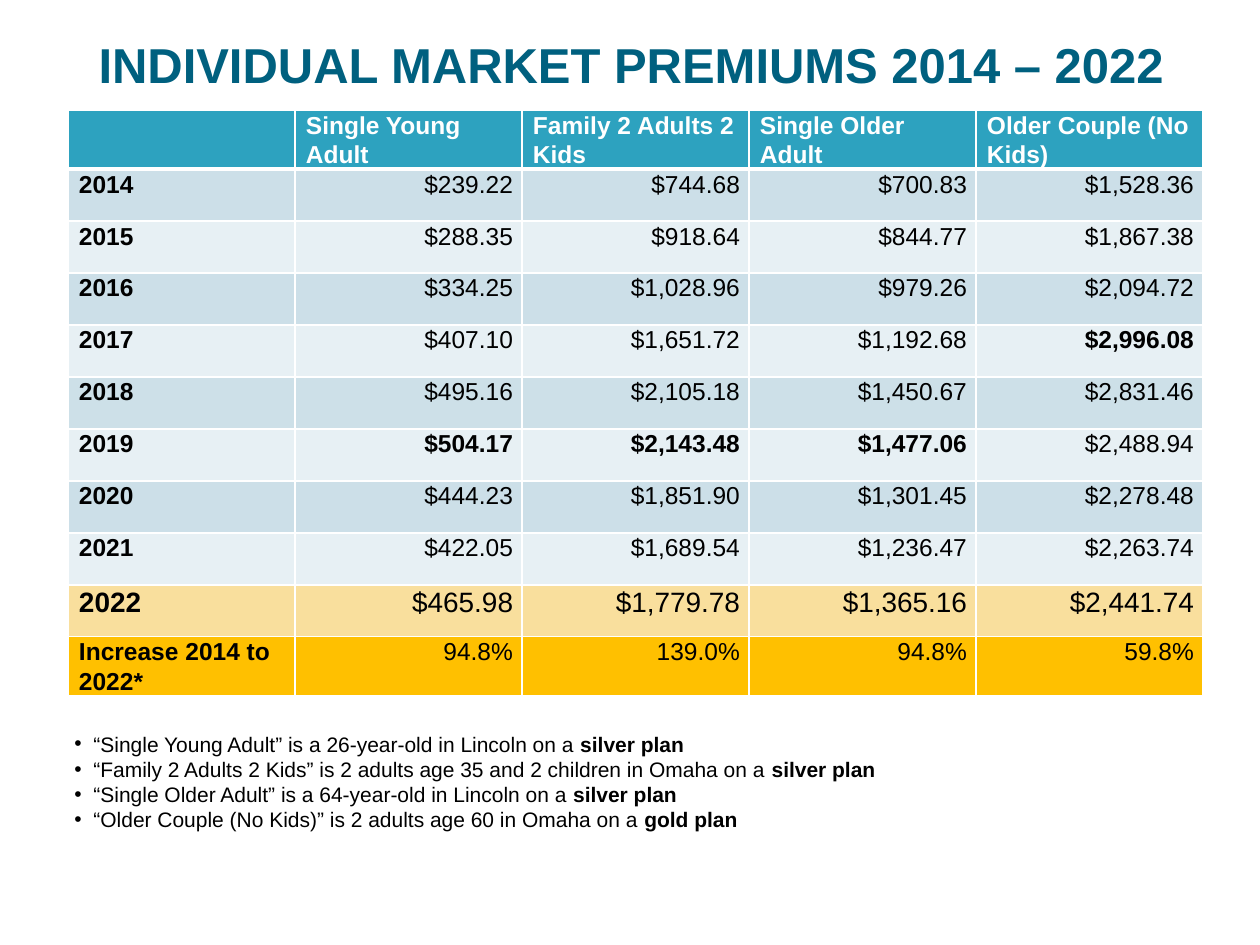
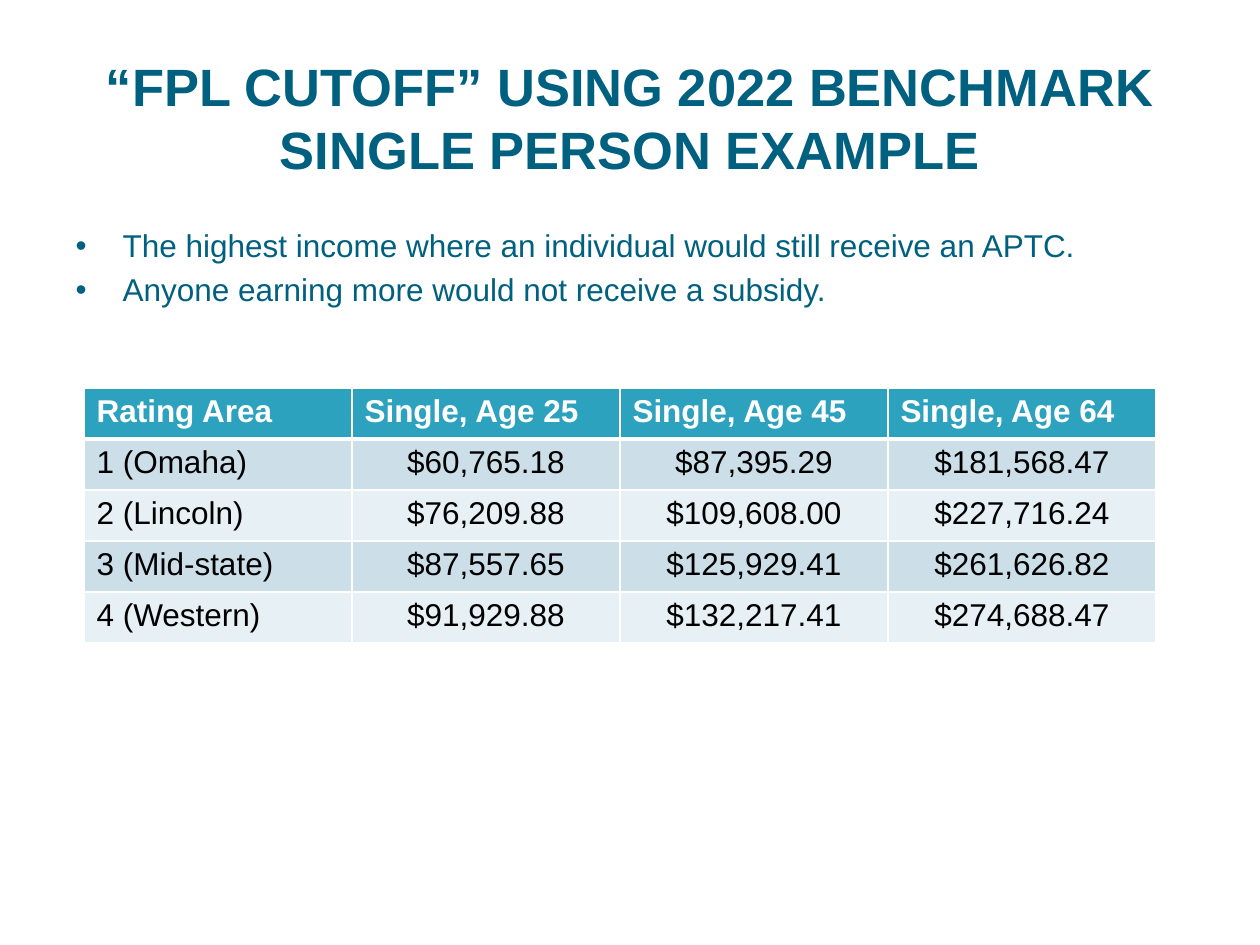
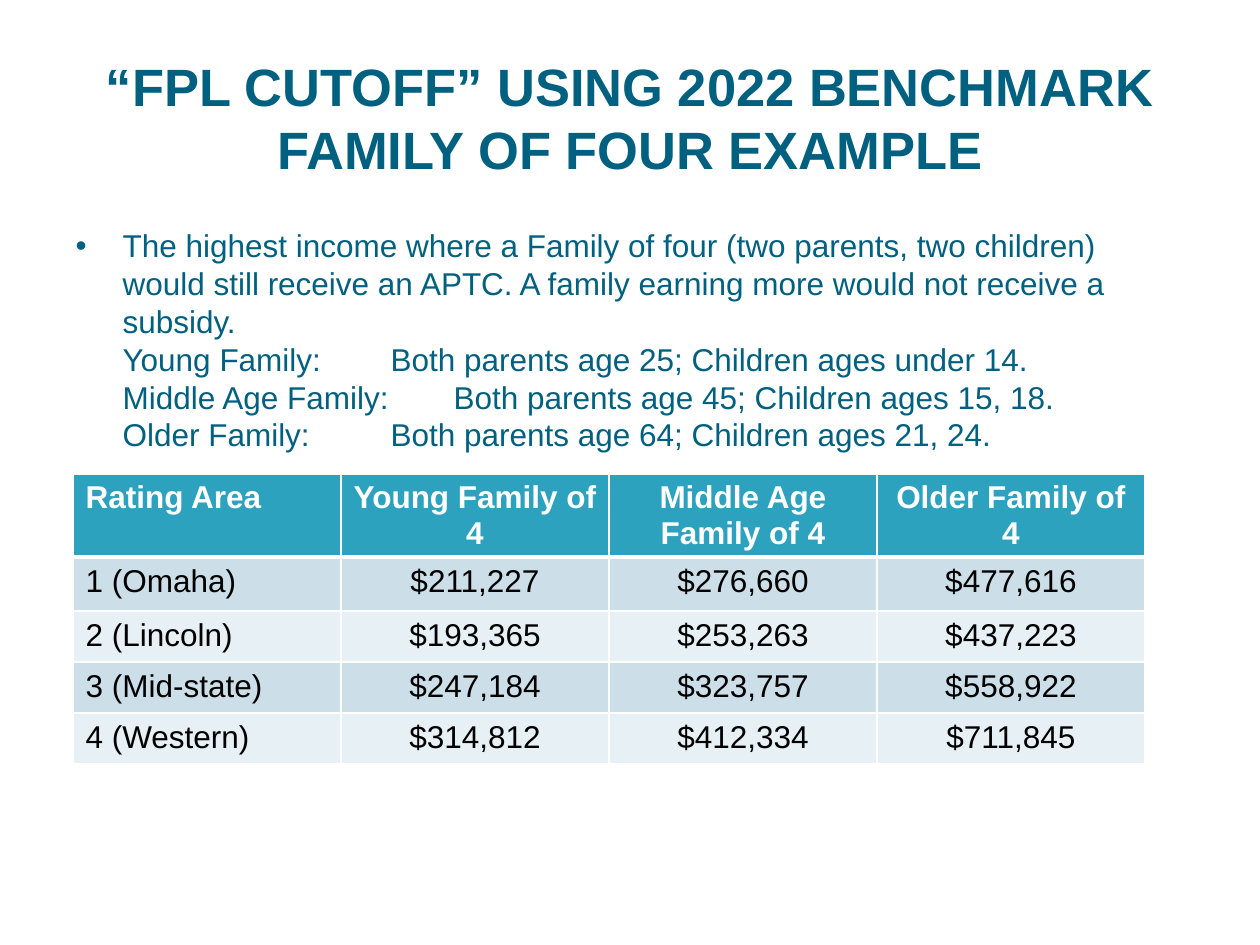
import copy

import pptx
import pptx.dml.color
import pptx.enum.text
import pptx.oxml
import pptx.oxml.ns
import pptx.util

EMU_PER_PX = 914400 / 126
FONT = "Arial"
TITLE_BLUE = "00607F"
HEADER_BLUE = "2DA2BF"
BAND_DARK, BAND_LIGHT = "CCDFE8", "E7F0F4"
PALE_GOLD, GOLD = "F9DF9D", "FFC000"
BLACK, WHITE = "000000", "FFFFFF"

LEFT = pptx.enum.text.PP_ALIGN.LEFT
CENTER = pptx.enum.text.PP_ALIGN.CENTER
RIGHT = pptx.enum.text.PP_ALIGN.RIGHT

PREMIUM_HEADER = ["", "Single Young Adult", "Family 2 Adults 2 Kids",
                  "Single Older Adult", "Older Couple (No Kids)"]
PREMIUMS = [
    ["2014", "$239.22", "$744.68", "$700.83", "$1,528.36"],
    ["2015", "$288.35", "$918.64", "$844.77", "$1,867.38"],
    ["2016", "$334.25", "$1,028.96", "$979.26", "$2,094.72"],
    ["2017", "$407.10", "$1,651.72", "$1,192.68", "$2,996.08"],
    ["2018", "$495.16", "$2,105.18", "$1,450.67", "$2,831.46"],
    ["2019", "$504.17", "$2,143.48", "$1,477.06", "$2,488.94"],
    ["2020", "$444.23", "$1,851.90", "$1,301.45", "$2,278.48"],
    ["2021", "$422.05", "$1,689.54", "$1,236.47", "$2,263.74"],
    ["2022", "$465.98", "$1,779.78", "$1,365.16", "$2,441.74"],
    ["Increase 2014 to 2022*", "94.8%", "139.0%", "94.8%", "59.8%"],
]
PEAK_PREMIUMS = {"$504.17", "$2,143.48", "$1,477.06", "$2,996.08"}
PLAN_NOTES = [
    ("“Single Young Adult” is a 26-year-old in Lincoln on a ", "silver plan"),
    ("“Family 2 Adults 2 Kids” is 2 adults age 35 and 2 children in Omaha on a ",
     "silver plan"),
    ("“Single Older Adult” is a 64-year-old in Lincoln on a ", "silver plan"),
    ("“Older Couple (No Kids)” is 2 adults age 60 in Omaha on a ", "gold plan"),
]

SINGLE_CUTOFFS = [
    ["Rating Area", "Single, Age 25", "Single, Age 45", "Single, Age 64"],
    ["1 (Omaha)", "$60,765.18", "$87,395.29", "$181,568.47"],
    ["2 (Lincoln)", "$76,209.88", "$109,608.00", "$227,716.24"],
    ["3 (Mid-state)", "$87,557.65", "$125,929.41", "$261,626.82"],
    ["4 (Western)", "$91,929.88", "$132,217.41", "$274,688.47"],
]
SINGLE_POINTS = [
    "The highest income where an individual would still receive an APTC.",
    "Anyone earning more would not receive a subsidy.",
]
FAMILY_CUTOFFS = [
    ["Rating Area", "Young Family of 4", "Middle Age Family of 4", "Older Family of 4"],
    ["1 (Omaha)", "$211,227", "$276,660", "$477,616"],
    ["2 (Lincoln)", "$193,365", "$253,263", "$437,223"],
    ["3 (Mid-state)", "$247,184", "$323,757", "$558,922"],
    ["4 (Western)", "$314,812", "$412,334", "$711,845"],
]
FAMILY_POINTS = [
    "The highest income where a Family of four (two parents, two children) would "
    "still receive an APTC. A family earning more would not receive a subsidy.\n"
    "Young Family: \tBoth parents age 25; Children ages under 14.\n"
    "Middle Age Family: \tBoth parents age 45; Children ages 15, 18.\n"
    "Older Family: \t\tBoth parents age 64; Children ages 21, 24.",
]


def px(length):
    return pptx.util.Emu(round(length * EMU_PER_PX))


def rgb(color):
    return pptx.dml.color.RGBColor.from_string(color)


def place(shape, left, top, width, height):
    shape.left, shape.top = px(left), px(top)
    shape.width, shape.height = px(width), px(height)


def format_runs(paragraph, size, color, bold=False):
    for run in paragraph.runs:
        run.font.name = FONT
        run.font.size = pptx.util.Pt(size)
        run.font.bold = bold
        run.font.color.rgb = rgb(color)
    # Line breaks take the same size as the text around them
    for line_break in paragraph._p.findall(pptx.oxml.ns.qn("a:br")):
        line_break.insert(0, copy.deepcopy(paragraph.runs[0]._r.rPr))


def add_bullet(paragraph, color, hang):
    properties = paragraph._p.get_or_add_pPr()
    properties.set("marL", str(px(hang)))
    properties.set("indent", str(-px(hang)))
    namespace = pptx.oxml.ns.nsdecls("a")
    for xml in (f'<a:buClr {namespace}><a:srgbClr val="{color}"/></a:buClr>',
                f'<a:buFont {namespace} typeface="{FONT}"/>',
                f'<a:buChar {namespace} char="•"/>'):
        properties.append(pptx.oxml.parse_xml(xml))


def set_title(slide, text, size, box):
    title = slide.shapes.title
    place(title, *box)
    frame = title.text_frame
    frame.auto_size = pptx.enum.text.MSO_AUTO_SIZE.NONE
    frame.vertical_anchor = pptx.enum.text.MSO_ANCHOR.MIDDLE
    paragraph = frame.paragraphs[0]
    paragraph.text = text
    paragraph.alignment = CENTER
    format_runs(paragraph, size, TITLE_BLUE, bold=True)


def set_body(slide, points):
    body = slide.placeholders[1]
    place(body, 63, 220, 1134, 624)
    frame = body.text_frame
    frame.auto_size = pptx.enum.text.MSO_AUTO_SIZE.NONE
    for index, point in enumerate(points):
        paragraph = frame.paragraphs[0] if index == 0 else frame.add_paragraph()
        paragraph.text = point
        paragraph.space_before = pptx.util.Pt(3.6 if index else 0)
        add_bullet(paragraph, TITLE_BLUE, 47)
        format_runs(paragraph, 18, TITLE_BLUE)


def add_plan_notes(slide):
    box = slide.shapes.add_textbox(px(62), px(725), px(1040), px(115))
    frame = box.text_frame
    frame.word_wrap = True
    for index, (description, plan) in enumerate(PLAN_NOTES):
        paragraph = frame.paragraphs[0] if index == 0 else frame.add_paragraph()
        paragraph.text = description
        paragraph.add_run().text = plan
        add_bullet(paragraph, BLACK, 19)
        format_runs(paragraph, 12, BLACK)
        paragraph.runs[1].font.bold = True


def set_borders(cell, top, bottom):
    properties = cell._tc.get_or_add_tcPr()
    for side, points in (("L", 1), ("R", 1), ("T", top), ("B", bottom)):
        properties.append(pptx.oxml.parse_xml(
            f'<a:ln{side} {pptx.oxml.ns.nsdecls("a")} w="{pptx.util.Pt(points)}">'
            f'<a:solidFill><a:srgbClr val="{WHITE}"/></a:solidFill></a:ln{side}>'))


def add_grid(slide, rows, left, top, column_width, row_height):
    """Add a table with white rules, a blue header and banded rows."""
    columns = len(rows[0])
    table = slide.shapes.add_table(
        len(rows), columns, px(left), px(top),
        px(column_width * columns), px(row_height * len(rows))).table
    table.horz_banding = False
    for column in table.columns:
        column.width = px(column_width)
    for row_index, values in enumerate(rows):
        table.rows[row_index].height = px(row_height)
        band = BAND_DARK if row_index % 2 else BAND_LIGHT
        for column_index, value in enumerate(values):
            cell = table.cell(row_index, column_index)
            cell.text = value
            set_borders(cell, top=3 if row_index == 1 else 1,
                        bottom=3 if row_index == 0 else 1)
            fill_cell(cell, band if row_index else HEADER_BLUE)
    return table


def fill_cell(cell, color):
    cell.fill.solid()
    cell.fill.fore_color.rgb = rgb(color)


def format_cell(cell, size, header, bold, alignment):
    paragraph = cell.text_frame.paragraphs[0]
    paragraph.alignment = alignment
    format_runs(paragraph, size, WHITE if header else BLACK, bold)


def add_premium_table(slide):
    rows = [PREMIUM_HEADER] + PREMIUMS
    table = add_grid(slide, rows, 68, 110, 227, 52)
    highlights = {"2018": "CDE0E8", "2022": PALE_GOLD,
                  "Increase 2014 to 2022*": GOLD}
    for row_index, values in enumerate(rows):
        header = row_index == 0
        for column_index, value in enumerate(values):
            cell = table.cell(row_index, column_index)
            cell.margin_left, cell.margin_right = px(11), px(9)
            cell.margin_top = cell.margin_bottom = 0
            cell.text_frame.paragraphs[0].line_spacing = 1.07
            bold = header or column_index == 0 or value in PEAK_PREMIUMS
            format_cell(cell, 16 if values[0] == "2022" else 14, header, bold,
                        LEFT if header or column_index == 0 else RIGHT)
            if values[0] in highlights:
                fill_cell(cell, highlights[values[0]])


def add_cutoff_table(slide, rows, left, top, header_alignment):
    table = add_grid(slide, rows, left, top, 268, 51)
    for row_index, values in enumerate(rows):
        header = row_index == 0
        for column_index in range(len(values)):
            alignment = header_alignment if header else CENTER
            format_cell(table.cell(row_index, column_index), 18, header, header,
                        alignment if column_index else LEFT)
    return table


def add_cutoff_slide(presentation, example, points):
    slide = presentation.slides.add_slide(presentation.slide_layouts[1])
    set_title(slide, "“FPL CUTOFF” USING 2022 BENCHMARK\n" + example, 30,
              (63, 38, 1134, 158))
    set_body(slide, points)
    return slide


def main():
    presentation = pptx.Presentation()
    presentation.slide_width, presentation.slide_height = px(1260), px(945)

    # Premiums by year
    slide = presentation.slides.add_slide(presentation.slide_layouts[5])
    set_title(slide, "INDIVIDUAL MARKET PREMIUMS 2014 – 2022", 28,
              (64, 22, 1134, 84))
    add_premium_table(slide)
    add_plan_notes(slide)

    # Income cutoff for one person
    slide = add_cutoff_slide(presentation, "SINGLE PERSON EXAMPLE", SINGLE_POINTS)
    add_cutoff_table(slide, SINGLE_CUTOFFS, 84, 388, LEFT)

    # Income cutoff for a family
    slide = add_cutoff_slide(presentation, "FAMILY OF FOUR EXAMPLE", FAMILY_POINTS)
    table = add_cutoff_table(slide, FAMILY_CUTOFFS, 73, 474, CENTER)
    table.rows[1].height = px(54)

    presentation.save("out.pptx")


if __name__ == "__main__":
    main()
